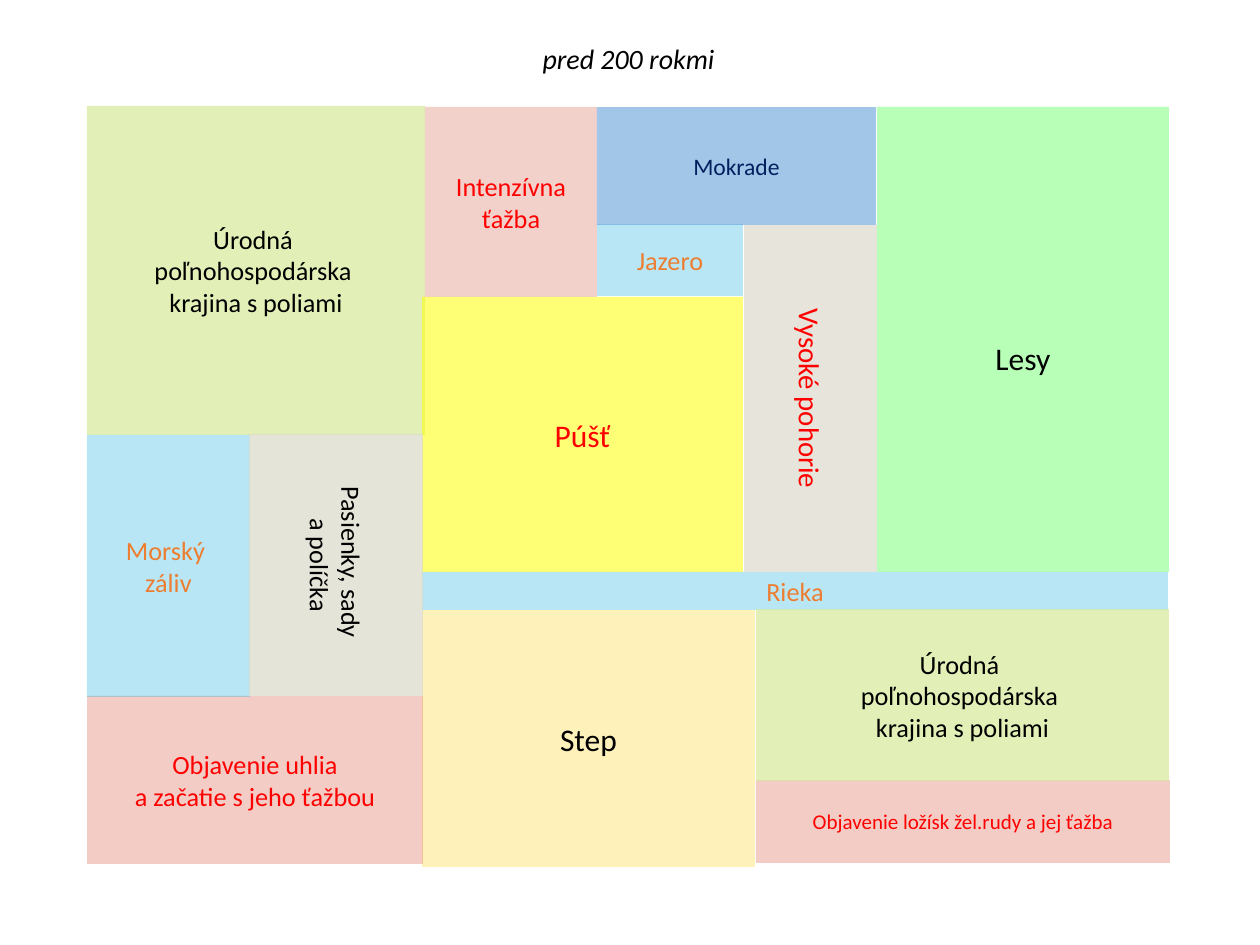
from lxml.etree import SubElement
from pptx import Presentation
from pptx.dml.color import RGBColor
from pptx.enum.shapes import MSO_SHAPE
from pptx.enum.text import MSO_ANCHOR, PP_ALIGN
from pptx.oxml.ns import qn
from pptx.util import Pt

PX = 914400 / 126
WIDE, HIGH = 1260, 945

THEME = {
    "font": "Calibri",
    "size": {"title": 16, "big": 18, "tall": 16.5, "text": 15,
             "less": 13.5, "small": 12},
    "ink": {"black": "000000", "red": "FF0000", "orange": "ED7D31",
            "navy": "002060"},
    # land: fill colour, opacity in percent
    "land": {"forest": ("00FF00", 28), "field": ("D6EB99", 70),
             "desert": ("FFFF00", 54), "water": ("11A9DF", 29),
             "mine": ("D34831", 28), "pit": ("D34831", 25),
             "steppe": ("FFCC00", 27), "rock": ("DBD9C9", 66),
             "meadow": ("DBD9C9", 70), "marsh": ("5B9BD5", 57)},
}

TITLE = "pred 200 rokmi"
TITLE_BOX = (156, 35, 945, 47)
FARM = ["Úrodná ", "poľnohospodárska ", "krajina s poliami"]

# paragraphs, land, ink, size, box as seen (left, top, width, height)
ZONES = [
    (["Lesy"], "forest", "black", "big", (877, 107, 292, 465)),
    (FARM, "field", "black", "text", (87, 106, 338, 329)),
    (["Púšť"], "desert", "red", "big", (422, 297, 321, 275)),
    (["Rieka"], "water", "orange", "text", (422, 572, 746, 38)),
    (["Objavenie ložísk žel.rudy a jej ťažba"], "mine", "red", "small",
     (756, 780, 414, 83)),
    (["Step"], "steppe", "black", "big", (422, 610, 333, 257)),
    (["Objavenie uhlia\na začatie s jeho ťažbou"], "mine", "red", "text",
     (87, 696, 336, 168)),
    (["Vysoké pohorie"], "rock", "red", "tall", (744, 225, 133, 347)),
    (["Morský ", "záliv"], "water", "orange", "text", (87, 435, 163, 262)),
    (["Pasienky, sady \na políčka"], "meadow", "black", "text",
     (249, 434, 174, 262)),
    (FARM, "field", "black", "text", (756, 609, 413, 172)),
    (["Intenzívna\nťažba"], "pit", "red", "text", (425, 107, 172, 190)),
    (["Jazero"], "water", "orange", "text", (597, 224, 146, 72)),
    (["Mokrade"], "marsh", "navy", "less", (597, 107, 279, 118)),
]
TURNED = {"rock", "meadow"}   # text runs downwards
INSET = {"forest": 44}        # lowers the label


def emu(*vals):
    return [round(v * PX) for v in vals]


def write(frame, paras, size, ink, italic=None):
    """Fill a frame with centred paragraphs; a newline is a line break."""
    frame.vertical_anchor = MSO_ANCHOR.MIDDLE
    for i, text in enumerate(paras):
        para = frame.add_paragraph() if i else frame.paragraphs[0]
        para.alignment = PP_ALIGN.CENTER
        for j, line in enumerate(text.split("\n")):
            if j:
                para.add_line_break()
            run = para.add_run()
            run.text = line
            font = run.font
            font.name = THEME["font"]
            font.size = Pt(THEME["size"][size])
            font.italic = italic
            font.color.rgb = RGBColor.from_string(THEME["ink"][ink])


def tint(shape, land):
    """Give a shape a see-through fill without outline or shadow."""
    color, alpha = THEME["land"][land]
    shape.shadow.inherit = False
    shape.line.fill.background()
    shape.fill.solid()
    shape.fill.fore_color.rgb = RGBColor.from_string(color)
    node = shape.fill._xPr.find(qn("a:solidFill"))[0]
    SubElement(node, qn("a:alpha")).set("val", str(alpha * 1000))


def add_zone(slide, paras, land, ink, size, box):
    left, top, wide, high = box
    if land in TURNED:
        left, top = left + (wide - high) / 2, top + (high - wide) / 2
        wide, high = high, wide
    shape = slide.shapes.add_shape(MSO_SHAPE.RECTANGLE,
                                   *emu(left, top, wide, high))
    shape.rotation = 90 if land in TURNED else 0
    tint(shape, land)
    frame = shape.text_frame
    frame.word_wrap = False
    if land in INSET:
        frame.margin_top = emu(INSET[land])[0]
    write(frame, paras, size, ink)


def main():
    deck = Presentation()
    deck.slide_width, deck.slide_height = emu(WIDE, HIGH)
    slide = deck.slides.add_slide(deck.slide_layouts[5])
    title = slide.shapes.title
    title.left, title.top, title.width, title.height = emu(*TITLE_BOX)
    write(title.text_frame, [TITLE], "title", "black", italic=True)
    for zone in ZONES:
        add_zone(slide, *zone)
    deck.save("out.pptx")


if __name__ == "__main__":
    main()
